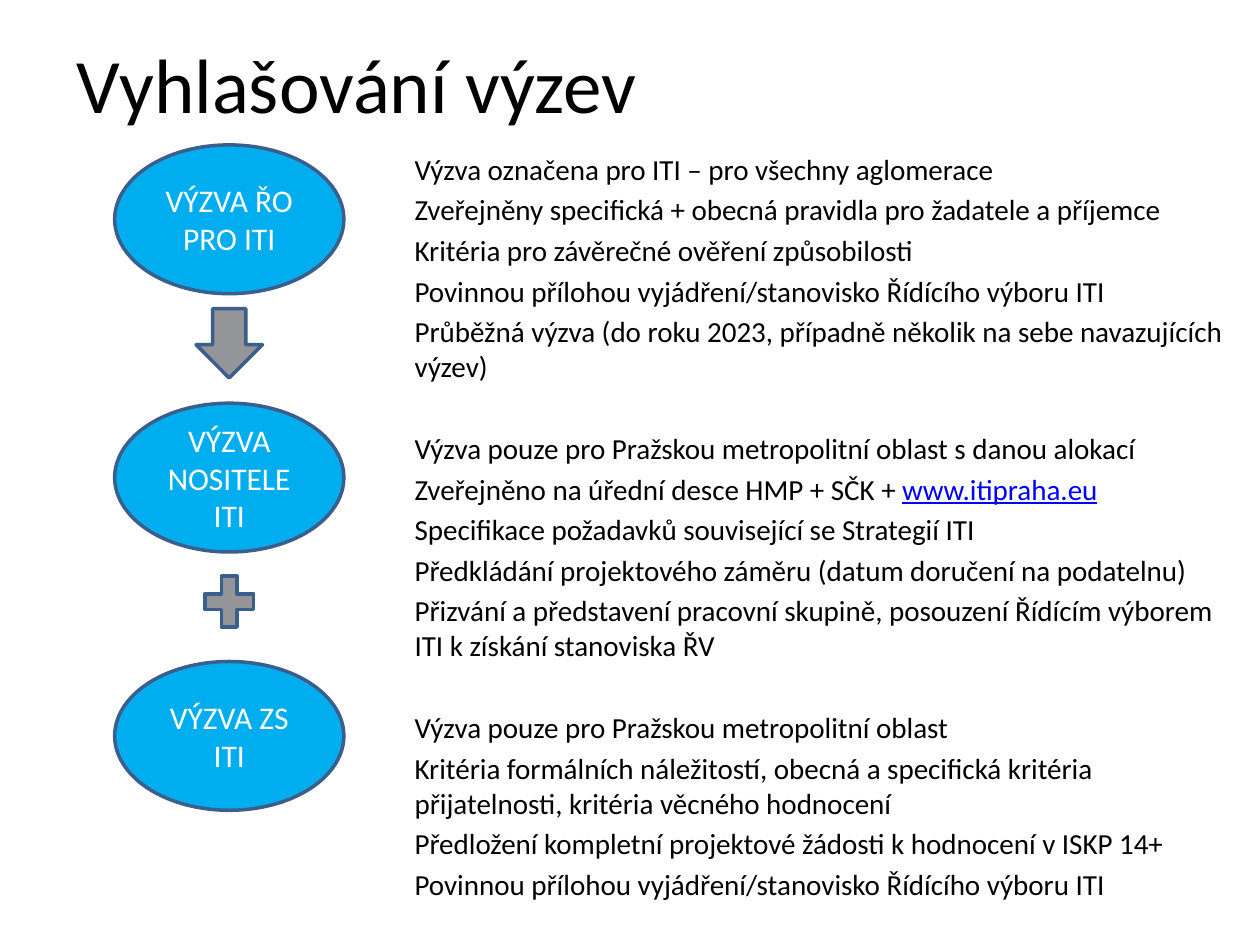
from pptx import Presentation
from pptx.dml.color import RGBColor
from pptx.enum import shapes, text
from pptx.util import Pt

BLACK = RGBColor(0x00, 0x00, 0x00)
WHITE = RGBColor(0xFF, 0xFF, 0xFF)
LINK_BLUE = RGBColor(0x00, 0x00, 0xFF)
SKY_BLUE = RGBColor(0x00, 0xAE, 0xEF)
GREY = RGBColor(0x93, 0x95, 0x98)
OUTLINE = RGBColor(0x3A, 0x5F, 0x8C)
FONT = "Calibri"
WEB_ADDRESS = "www.itipraha.eu"

STAGES = ["VÝZVA ŘO PRO ITI", "VÝZVA NOSITELE ITI", "VÝZVA ZS ITI"]
SYMBOLS = [shapes.MSO_SHAPE.DOWN_ARROW, shapes.MSO_SHAPE.MATH_PLUS]
DETAILS = [
    [
        "Výzva označena pro ITI – pro všechny aglomerace",
        "Zveřejněny specifická + obecná pravidla pro žadatele a příjemce",
        "Kritéria pro závěrečné ověření způsobilosti",
        "Povinnou přílohou vyjádření/stanovisko Řídícího výboru ITI",
        "Průběžná výzva (do roku 2023, případně několik na sebe navazujících výzev)",
    ],
    [
        "Výzva pouze pro Pražskou metropolitní oblast s danou alokací",
        "Zveřejněno na úřední desce HMP + SČK + " + WEB_ADDRESS,
        "Specifikace požadavků související se Strategií ITI",
        "Předkládání projektového záměru (datum doručení na podatelnu)",
        "Přizvání a představení pracovní skupině, posouzení Řídícím výborem ITI k získání stanoviska ŘV",
    ],
    [
        "Výzva pouze pro Pražskou metropolitní oblast",
        "Kritéria formálních náležitostí, obecná a specifická kritéria přijatelnosti, kritéria věcného hodnocení",
        "Předložení kompletní projektové žádosti k hodnocení v ISKP 14+",
        "Povinnou přílohou vyjádření/stanovisko Řídícího výboru ITI",
    ],
]


def place(shape, left, top, width, height):
    """Move and size a shape, in points."""
    shape.left, shape.top = Pt(left), Pt(top)
    shape.width, shape.height = Pt(width), Pt(height)


def format_paragraph(paragraph, size, color, alignment):
    """Set the font and alignment of a whole paragraph."""
    paragraph.alignment = alignment
    font = paragraph.font
    font.name, font.size = FONT, Pt(size)
    font.color.rgb = color


def prepare_frame(shape, anchor):
    """Return the wrapping, fixed-size text frame of a shape."""
    frame = shape.text_frame
    frame.word_wrap = True
    frame.auto_size = text.MSO_AUTO_SIZE.NONE
    frame.vertical_anchor = anchor
    return frame


def fill_title(title, left, top, width, height):
    """Place and write the slide title."""
    place(title, left, top, width, height)
    frame = prepare_frame(title, text.MSO_ANCHOR.MIDDLE)
    frame.text = "Vyhlašování výzev"
    format_paragraph(frame.paragraphs[0], 44, BLACK, text.PP_ALIGN.LEFT)


def fill_details(body, left, top, width, height):
    """Write the groups of details, with a wider gap between groups."""
    place(body, left, top, width, height)
    frame = prepare_frame(body, text.MSO_ANCHOR.TOP)
    paragraph = frame.paragraphs[0]
    for group_index, group in enumerate(DETAILS):
        for line_index, line in enumerate(group):
            gap = 3.3
            if line_index == 0:
                gap = 26.8 if group_index else 0
            if group_index or line_index:
                paragraph = frame.add_paragraph()
            paragraph.space_before = Pt(gap)
            format_paragraph(paragraph, 16.6, BLACK, text.PP_ALIGN.LEFT)
            words, address, _ = line.partition(WEB_ADDRESS)
            paragraph.add_run().text = words
            if address:
                run = paragraph.add_run()
                run.text = address
                run.font.underline = True
                run.font.color.rgb = LINK_BLUE


def add_symbol(slide, kind, color, left, top, width, height):
    """Add a filled, outlined preset shape."""
    shape = slide.shapes.add_shape(kind, Pt(left), Pt(top), Pt(width), Pt(height))
    shape.shadow.inherit = False
    shape.fill.solid()
    shape.fill.fore_color.rgb = color
    shape.line.color.rgb = OUTLINE
    shape.line.width = Pt(2)
    return shape


def add_flow(slide, left, top, width, height):
    """Stack the stages at an equal pitch with a symbol in each gap."""
    stage_height, symbol_width, symbol_height = 85, 38, 39.6
    pitch = (height - stage_height) / (len(STAGES) - 1)
    for index, label in enumerate(STAGES):
        stage = add_symbol(slide, shapes.MSO_SHAPE.OVAL, SKY_BLUE,
                           left, top + index * pitch, width, stage_height)
        frame = prepare_frame(stage, text.MSO_ANCHOR.MIDDLE)
        frame.text = label
        format_paragraph(frame.paragraphs[0], 18, WHITE, text.PP_ALIGN.CENTER)
    for index, kind in enumerate(SYMBOLS):
        add_symbol(slide, kind, GREY, left + (width - symbol_width) / 2,
                   top + index * pitch + stage_height + 8.6,
                   symbol_width, symbol_height)


def main():
    """Build and save the presentation."""
    presentation = Presentation()
    presentation.slide_width, presentation.slide_height = Pt(720), Pt(540)
    slide = presentation.slides.add_slide(presentation.slide_layouts[0])
    fill_title(slide.shapes.title, 36.7, 6.5, 612, 82)
    fill_details(slide.placeholders[1], 229.7, 82.8, 481.7, 391)
    add_flow(slide, 65.5, 82.8, 131, 380.2)
    presentation.save("out.pptx")


if __name__ == "__main__":
    main()
